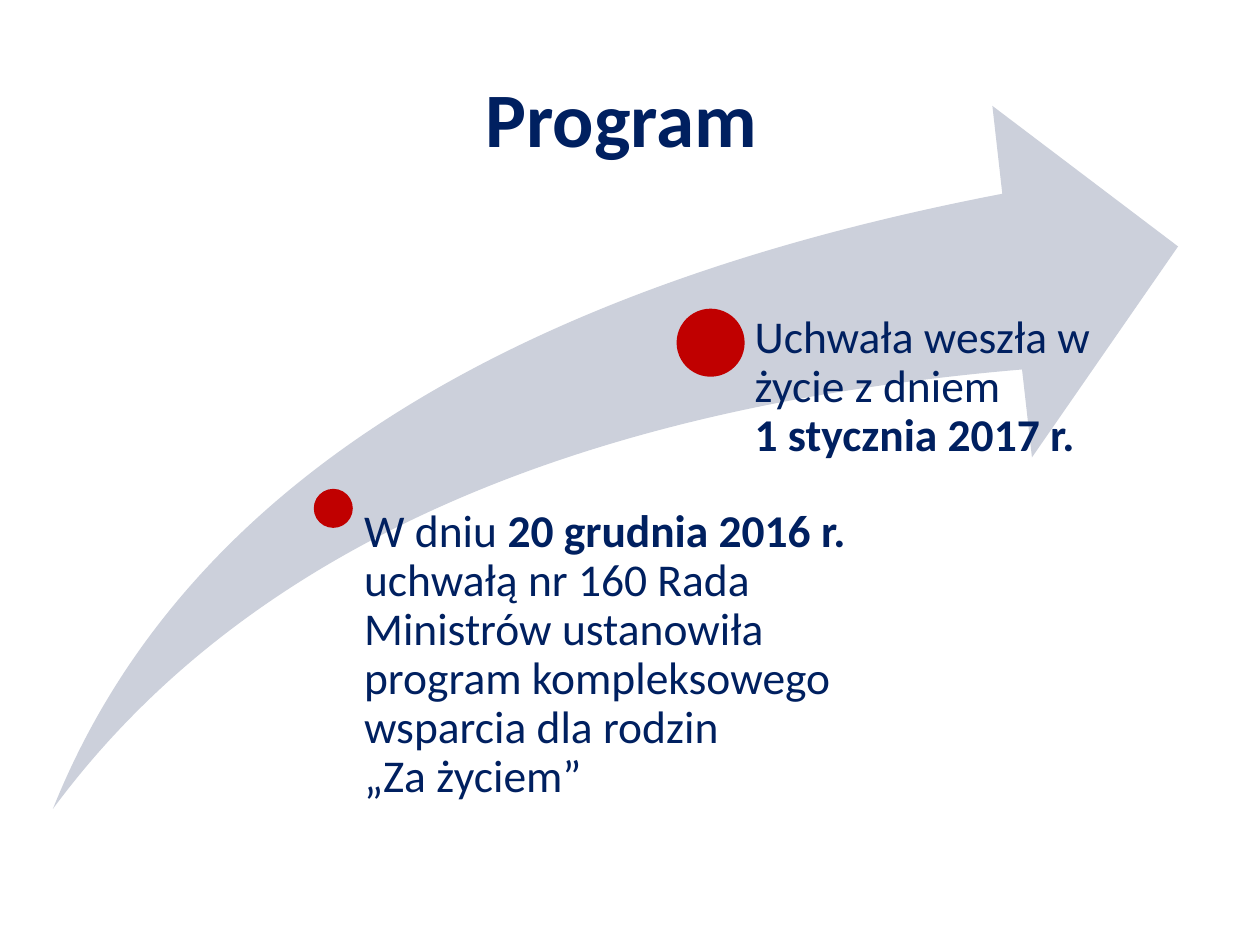
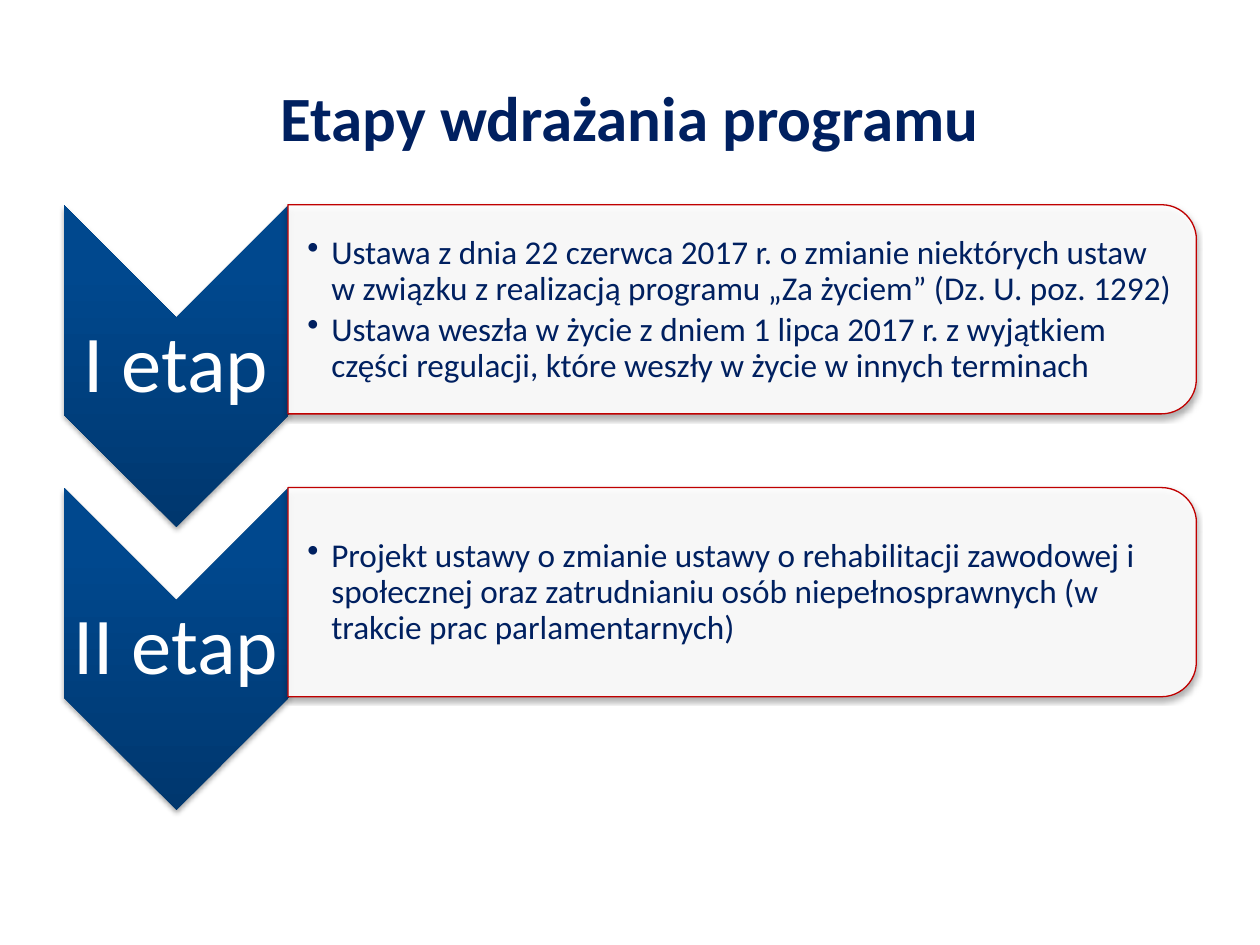
from lxml import etree
from pptx import Presentation
from pptx.dml.color import RGBColor
from pptx.enum.shapes import MSO_SHAPE
from pptx.enum.text import MSO_ANCHOR, PP_ALIGN
from pptx.oxml import parse_xml
from pptx.oxml.ns import nsdecls, qn
from pptx.util import Inches, Pt

NAVY = RGBColor(0x00, 0x20, 0x60)
RED = RGBColor(0xC0, 0x00, 0x00)
WHITE = RGBColor(0xFF, 0xFF, 0xFF)
SWOOSH = RGBColor(0xCC, 0xD0, 0xDB)
FONT = "Calibri"

GRADIENT = (
    f'<a:gradFill {nsdecls("a")} rotWithShape="0"><a:gsLst>'
    '<a:gs pos="0"><a:srgbClr val="00376E"/></a:gs>'
    '<a:gs pos="80000"><a:srgbClr val="00488E"/></a:gs>'
    '<a:gs pos="100000"><a:srgbClr val="00488F"/></a:gs>'
    '</a:gsLst><a:lin ang="16200000" scaled="0"/></a:gradFill>'
)
SHADOW = (
    f'<a:effectLst {nsdecls("a")}><a:outerShdw blurRad="39370" dist="22860" '
    'dir="5400000" rotWithShape="0"><a:srgbClr val="000000">'
    '<a:alpha val="35000"/></a:srgbClr></a:outerShdw></a:effectLst>'
)


def write_text(shape, paragraphs, size, color=NAVY, align=PP_ALIGN.LEFT,
               anchor=MSO_ANCHOR.TOP, insets=None, spacing=None, after=None, bullet=False):
    frame = shape.text_frame
    frame.word_wrap = True
    frame.vertical_anchor = anchor
    if insets:
        for side, inset in zip(("left", "top", "right", "bottom"), insets):
            setattr(frame, f"margin_{side}", Inches(inset))
    for index, runs in enumerate(paragraphs):
        paragraph = frame.add_paragraph() if index else frame.paragraphs[0]
        layout = {"alignment": align, "line_spacing": spacing, "space_after": after}
        for name, value in layout.items():
            if value is not None:
                setattr(paragraph, name, value)
        if bullet:
            properties = paragraph._p.get_or_add_pPr()
            properties.set("marL", str(Inches(0.19)))
            properties.set("indent", str(-Inches(0.19)))
            etree.SubElement(properties, qn("a:buChar")).set("char", "•")
        for text, bold in runs:
            for line_index, line in enumerate(text.split("\n")):
                if line_index:
                    paragraph.add_line_break()
                if line:
                    run = paragraph.add_run()
                    run.text = line
                    look = {"name": FONT, "size": Pt(size), "bold": bold}
                    for name, value in look.items():
                        setattr(run.font, name, value)
                    run.font.color.rgb = color


def add_shape(slide, kind, box, fill=None):
    shape = slide.shapes.add_shape(kind, *map(Inches, box))
    shape.shadow.inherit = False
    shape.line.fill.background()
    if fill is not None:
        shape.fill.solid()
        shape.fill.fore_color.rgb = fill
    return shape


presentation = Presentation()
presentation.slide_width = Inches(10)
presentation.slide_height = Inches(7.5)

slides = []
for title_text, title_size in (("Program ", 44), ("Etapy wdrażania programu", 36)):
    slide = presentation.slides.add_slide(presentation.slide_layouts[5])
    title = slide.shapes.title
    title.left, title.top, title.width, title.height = map(Inches, (0.5, 0.3, 9, 1.25))
    write_text(title, [[(title_text, True)]], title_size,
               align=PP_ALIGN.CENTER, anchor=MSO_ANCHOR.MIDDLE)
    slides.append(slide)
program_slide, stages_slide = slides

swoosh = add_shape(program_slide, MSO_SHAPE.SWOOSH_ARROW, (0.42, 0.84, 8.93, 5.58), SWOOSH)
swoosh.adjustments[0] = 0.25
swoosh.adjustments[1] = 0.25

milestones = [
    ((2.49, 3.88, 0.31, 0.31), (2.72, 4.03, 4, 2.38), 0.17, [
        ("W dniu ", False),
        ("20 grudnia 2016 r. ", True),
        ("uchwałą nr 160 Rada Ministrów ustanowiła program kompleksowego "
         "wsparcia dla rodzin \n„Za życiem”", False),
    ]),
    ((5.37, 2.45, 0.54, 0.54), (5.71, 2.49, 3.24, 2.61), 0.28, [
        ("Uchwała weszła w życie z dniem \n", False),
        ("1 stycznia 2017 r.", True),
    ]),
]
for dot_box, text_box, left_inset, runs in milestones:
    add_shape(program_slide, MSO_SHAPE.OVAL, dot_box, RED)
    description = program_slide.shapes.add_textbox(*map(Inches, text_box))
    write_text(description, [runs], 26, insets=(left_inset, 0, 0, 0), spacing=0.9)

stages = [
    ("I\u00a0etap", [
        "Ustawa z dnia 22 czerwca 2017 r. o zmianie niektórych ustaw \n"
        "w związku z realizacją programu „Za życiem” (Dz. U. poz. 1292)",
        "Ustawa weszła w życie z dniem 1 lipca 2017 r. z wyjątkiem części regulacji, "
        "które weszły w\u00a0życie w innych terminach",
    ]),
    ("II etap", [
        "Projekt ustawy o zmianie ustawy o rehabilitacji zawodowej i społecznej oraz "
        "zatrudnianiu osób niepełnosprawnych (w trakcie prac parlamentarnych)",
    ]),
]
STAGE_STEP = 2.245
for index, (stage_name, points) in enumerate(stages):
    offset = index * STAGE_STEP

    chevron = add_shape(stages_slide, MSO_SHAPE.CHEVRON, (0.12, 2.01 + offset, 2.56, 1.79))
    outline = chevron._element.spPr.find(qn("a:ln"))
    outline.addprevious(parse_xml(GRADIENT))

    label = stages_slide.shapes.add_textbox(*map(Inches, (0.5, 2.52 + offset, 1.79, 0.77)))
    write_text(label, [[(stage_name, False)]], 46, WHITE, PP_ALIGN.CENTER,
               MSO_ANCHOR.MIDDLE, (0.03, 0.03, 0.03, 0.03), 0.9)

    card = add_shape(stages_slide, MSO_SHAPE.ROUND_2_SAME_RECTANGLE,
                     (5.06, -1.15 + offset, 1.66, 7.21), WHITE)
    card.line.color.rgb = RED
    card.line.width = Pt(0.75)
    fill_color = card._element.spPr.find(qn("a:solidFill")).find(qn("a:srgbClr"))
    etree.SubElement(fill_color, qn("a:alpha")).set("val", "90000")

    for shape in (chevron, card):
        shape.rotation = 90
        properties = shape._element.spPr
        properties.replace(properties.find(qn("a:effectLst")), parse_xml(SHADOW))

    details = stages_slide.shapes.add_textbox(*map(Inches, (2.29, 1.71 + offset, 7.13, 1.5)))
    write_text(details, [[(point, False)] for point in points], 19,
               anchor=MSO_ANCHOR.MIDDLE, insets=(0.15, 0.01, 0.01, 0.01),
               spacing=0.9, after=Pt(3), bullet=True)

presentation.save("out.pptx")
